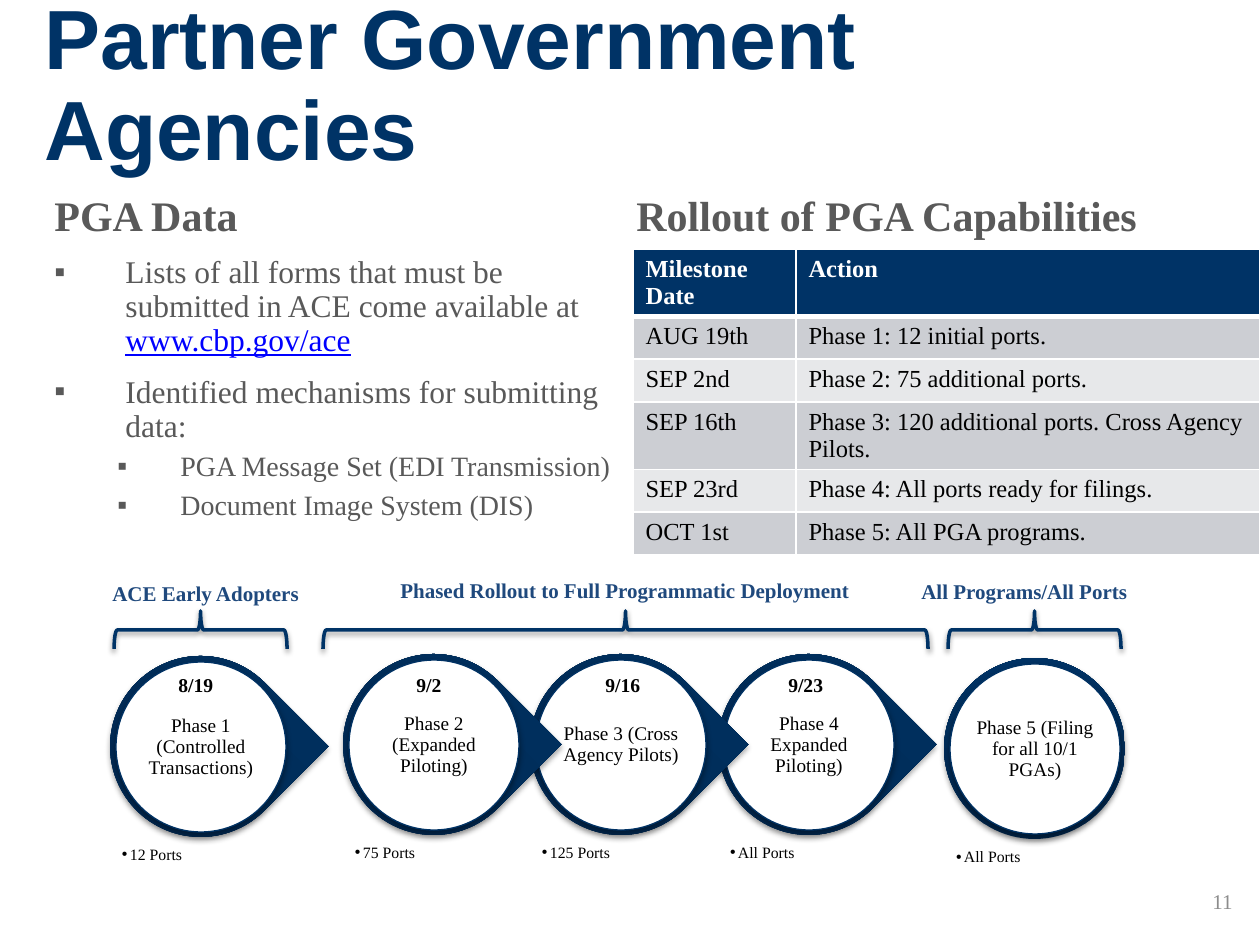
from lxml import etree
from pptx import Presentation
from pptx import util as u
from pptx.dml.color import RGBColor
from pptx.enum import shapes, text
from pptx.oxml import parse_xml
from pptx.oxml.ns import nsdecls, qn

PX = 914400 / 126
NAVY = RGBColor(0x00, 0x33, 0x66)
DEEP = RGBColor(0x00, 0x26, 0x4C)
RIM = RGBColor(0x00, 0x32, 0x64)
BLUE = RGBColor(0x1F, 0x49, 0x7D)
LINK = RGBColor(0x00, 0x00, 0xFF)
GRAY = RGBColor(0x59, 0x59, 0x59)
PALE = RGBColor(0x8C, 0x8C, 0x8C)
DARK = RGBColor(0xCC, 0xCE, 0xD3)
LIGHT = RGBColor(0xE7, 0xE8, 0xEA)
WHITE = RGBColor(0xFF, 0xFF, 0xFF)
BLACK = RGBColor(0x00, 0x00, 0x00)
SERIF = "Times New Roman"
MID = text.MSO_ANCHOR.MIDDLE
LEFT, MIDST, RIGHT = text.PP_ALIGN.LEFT, text.PP_ALIGN.CENTER, text.PP_ALIGN.RIGHT
KIND = shapes.MSO_SHAPE


def write(frame, words, size, ink, bold=False, font=SERIF, mark=None, inset=0, hang=0):
    """Add a paragraph of one run, with a hanging bullet if a mark is given."""
    frame.word_wrap = True
    para = frame.paragraphs[0]
    if para.runs:
        para = frame.add_paragraph()
    if mark:
        props = para._p.get_or_add_pPr()
        props.set("marL", str(round(inset * PX)))
        props.set("indent", str(round(-hang * PX)))
        etree.SubElement(props, qn("a:buFont")).set("typeface", "Arial")
        etree.SubElement(props, qn("a:buChar")).set("char", mark)
    run = para.add_run()
    run.text = words
    run.font.name, run.font.size, run.font.bold = font, u.Pt(size), bold
    run.font.color.rgb = ink
    return para


def shade(shape, alpha):
    """Give the shape a soft shadow that falls straight down."""
    shape._element.spPr.append(parse_xml(
        f'<a:effectLst {nsdecls("a")}><a:outerShdw blurRad="40000" dist="22000" dir="5400000" '
        f'rotWithShape="0"><a:srgbClr val="000000"><a:alpha val="{alpha}000"/>'
        '</a:srgbClr></a:outerShdw></a:effectLst>'))


deck = Presentation()
deck.slide_width, deck.slide_height = u.Inches(10), u.Inches(7.5)
slide = deck.slides.add_slide(deck.slide_layouts[6])
items = slide.shapes

# Title, headings and page number
heads = [
    (32, 32, 1228, 112, "Partner Government Agencies", 48, NAVY, True, "Arial", LEFT, 0.9),
    (42, 161, 533, 113, "PGA Data", 24, GRAY, True, SERIF, LEFT, 0.9),
    (624, 161, 604, 113, "Rollout of PGA Capabilities", 24, GRAY, True, SERIF, LEFT, 0.9),
    (1133, 876, 112, 50, "11", 12, PALE, False, SERIF, RIGHT, 1.0),
]
for x, y, w, h, words, size, ink, bold, font, side, lead in heads:
    box = items.add_textbox(*[round(v * PX) for v in (x, y, w, h)])
    box.text_frame.vertical_anchor = MID
    para = write(box.text_frame, words, size, ink, bold, font)
    para.alignment, para.line_spacing = side, lead

# Bullets on the left
body = items.add_textbox(*[round(v * PX) for v in (42, 250, 596, 571)]).text_frame
points = [
    ("Lists of all forms that must be submitted in ACE come available at ", 18, 71, 71, 0),
    ("Identified mechanisms for submitting data:", 18, 71, 71, 10),
    ("PGA Message Set (EDI Transmission)", 16, 126, 63, 5),
    ("Document Image System (DIS)", 16, 126, 63, 5),
]
for words, size, inset, hang, gap in points:
    para = write(body, words, size, GRAY, mark="▪", inset=inset, hang=hang)
    para.line_spacing, para.space_before = 0.9, u.Pt(gap)
link = body.paragraphs[0].add_run()
link.text = "www.cbp.gov/ace"
link.font.name, link.font.size, link.font.underline = SERIF, u.Pt(18), True
link.font.color.rgb = LINK

# Milestone table
rows = [
    ("Milestone Date", "Action"),
    ("AUG 19th", "Phase 1: 12 initial ports."),
    ("SEP 2nd", "Phase 2: 75 additional ports."),
    ("SEP 16th", "Phase 3: 120 additional ports. Cross Agency Pilots."),
    ("SEP 23rd", "Phase 4: All ports ready for filings."),
    ("OCT 1st", "Phase 5: All PGA programs."),
]
table = items.add_table(len(rows), 2, *[round(v * PX) for v in (633, 249, 627, 258)]).table
for col, w in zip(table.columns, (163, 464)):
    col.width = round(w * PX)
for r, row in enumerate(rows):
    table.rows[r].height = round(43 * PX)
    for c, words in enumerate(row):
        cell = table.cell(r, c)
        cell.margin_bottom = round(2 * PX)
        cell.fill.solid()
        cell.fill.fore_color.rgb = NAVY if r == 0 else DARK if r % 2 else LIGHT
        write(cell.text_frame, words, 14, BLACK if r else WHITE, r == 0)
        props = cell._tc.get_or_add_tcPr()
        for n, side in enumerate(("lnL", "lnR", "lnT", "lnB")):
            thick = (r, side) in ((0, "lnB"), (1, "lnT"))
            props.insert(n, parse_xml(
                f'<a:{side} {nsdecls("a")} w="{38100 if thick else 12700}"><a:solidFill>'
                f'<a:srgbClr val="FFFFFF"/></a:solidFill></a:{side}>'))

# Phases, the last one at the back
RING, DISC, EDGE = 181, 170, 6
phases = [
    (944, 658, KIND.OVAL, "Phase 5 (Filing for all 10/1 PGAs)", "All Ports"),
    (718, 654, KIND.TEAR, "Phase 4 Expanded Piloting)", "All Ports"),
    (530, 654, KIND.TEAR, "Phase 3 (Cross Agency Pilots)", "125 Ports"),
    (343, 654, KIND.TEAR, "Phase 2 (Expanded Piloting)", "75 Ports"),
    (110, 656, KIND.TEAR, "Phase 1 (Controlled Transactions)", "12 Ports"),
]
for x, y, kind, words, ports in phases:
    ring = items.add_shape(kind, *[round(v * PX) for v in (x, y, RING, RING)])
    if kind == KIND.TEAR:
        ring.rotation = 45
    ring.fill.gradient()
    ring.fill.gradient_angle = 90
    for stop, ink in zip(ring.fill.gradient_stops, (DEEP, RIM)):
        stop.color.rgb = ink
    ring.line.fill.background()
    shade(ring, 35)

    disc = items.add_shape(KIND.OVAL, *[round(v * PX) for v in (x + EDGE, y + EDGE, DISC, DISC)])
    disc.fill.solid()
    disc.fill.fore_color.rgb = WHITE
    disc.line.color.rgb, disc.line.width = RIM, u.Pt(0.75)
    shade(disc, 35)
    frame = disc.text_frame
    frame.margin_left = frame.margin_right = frame.margin_top = frame.margin_bottom = 0
    frame.vertical_anchor = MID
    para = write(frame, words, 11, BLACK)
    para.alignment, para.line_spacing = MIDST, 0.9

    box = items.add_textbox(*[round(v * PX) for v in (x + EDGE, y + 185, DISC, 100)])
    frame = box.text_frame
    frame.margin_left = frame.margin_right = frame.margin_top = frame.margin_bottom = round(6 * PX)
    write(frame, ports, 9, BLACK, mark="•", inset=8, hang=8).line_spacing = 0.9

# Braces: left end and span of each, turned to point up
DEPTH, LEVEL = 38, 630
for x, span in ((114, 173), (948, 173), (323, 605)):
    spot = (x + (span - DEPTH) / 2, LEVEL - span / 2, DEPTH, span)
    brace = items.add_shape(KIND.LEFT_BRACE, *[round(v * PX) for v in spot])
    brace.rotation = 90
    brace.fill.background()
    brace.line.color.rgb, brace.line.width = NAVY, u.Pt(2)
    shade(brace, 38)

# Brace labels and dates
notes = [
    (100, 574, 226, "ACE Early Adopters", 12, BLUE),
    (388, 571, 573, "Phased Rollout to Full Programmatic Deployment", 12, BLUE),
    (909, 572, 251, "All Programs/All Ports", 12, BLUE),
    (166, 667, 71, "8/19", 11.2, BLACK),
    (404, 667, 55, "9/2", 11.2, BLACK),
    (593, 667, 68, "9/16", 11.2, BLACK),
    (776, 667, 66, "9/23", 11.2, BLACK),
]
for x, y, w, words, size, ink in notes:
    box = items.add_textbox(*[round(v * PX) for v in (x, y, w, 37)])
    write(box.text_frame, words, size, ink, True)

deck.save("out.pptx")
